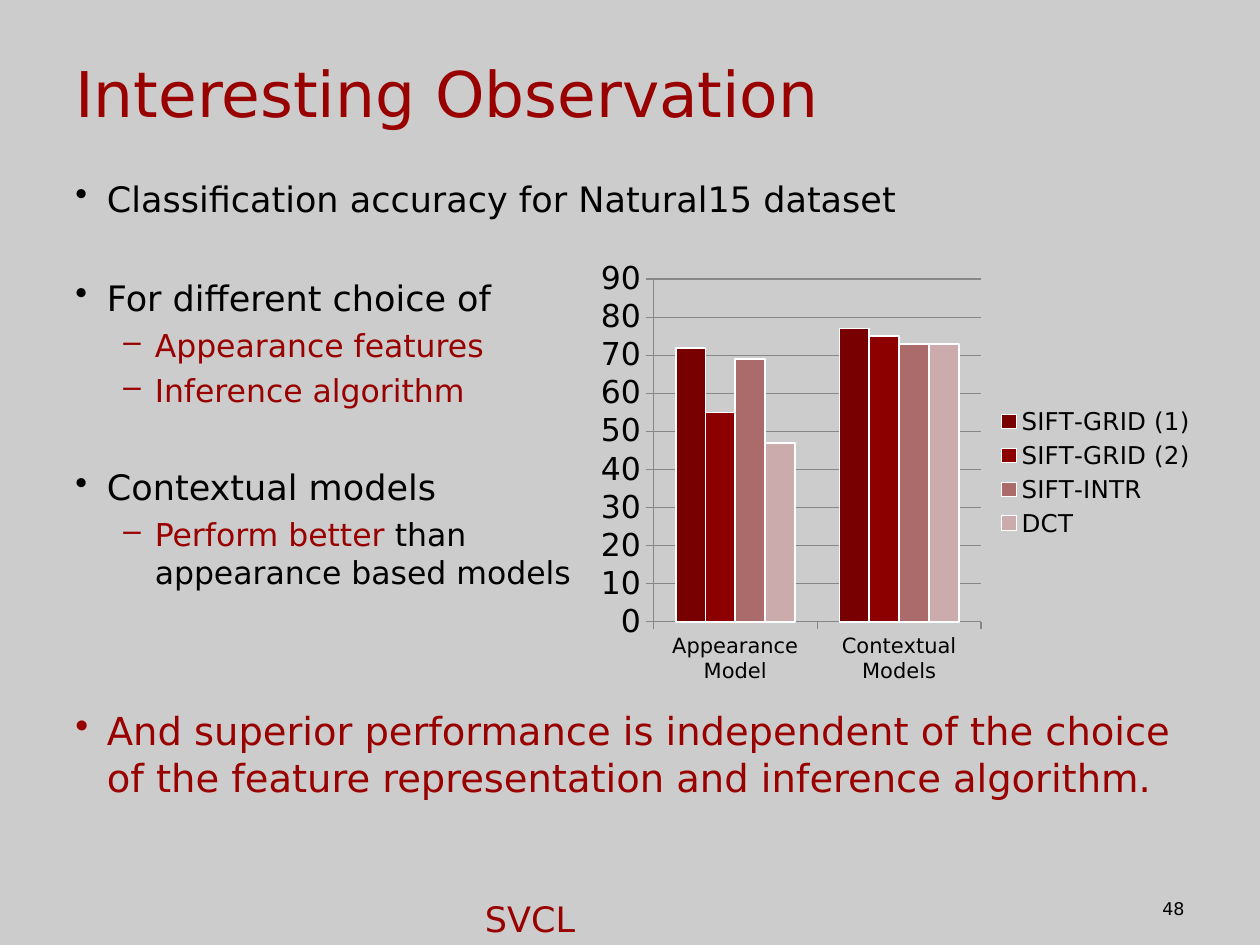
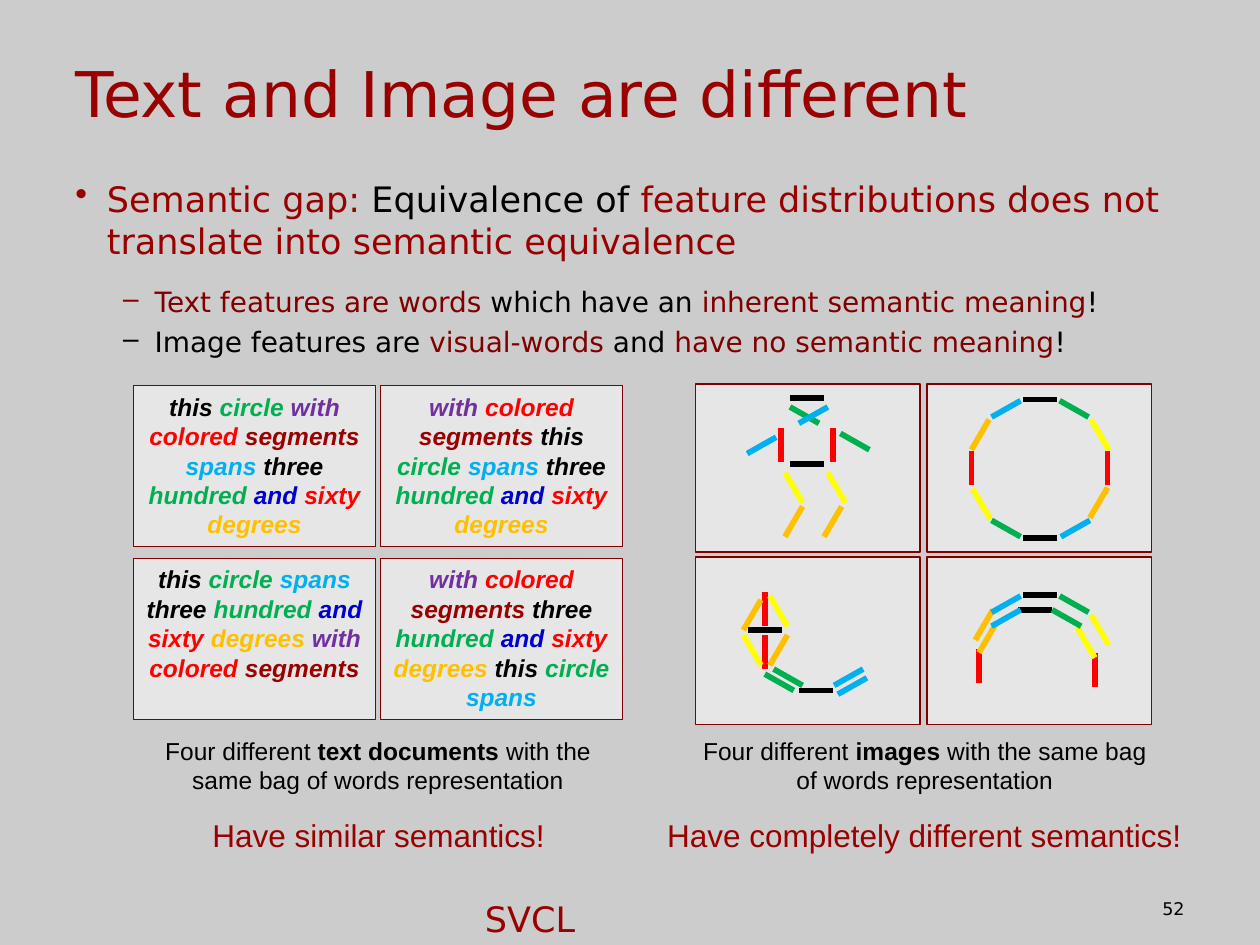
from lxml.etree import SubElement
from pptx import Presentation
from pptx.chart.data import CategoryChartData
from pptx.dml.color import RGBColor
from pptx.enum.chart import XL_CHART_TYPE, XL_LEGEND_POSITION, XL_TICK_MARK
from pptx.enum.shapes import MSO_CONNECTOR, MSO_SHAPE
from pptx.enum.text import MSO_ANCHOR, PP_ALIGN
from pptx.oxml.ns import qn
from pptx.util import Inches, Pt

SANS, ARIAL = "DejaVu Sans", "Arial"
BLACK, WHITE, GREY, PANEL = "000000", "FFFFFF", "CCCCCC", "E6E6E6"
CRIMSON, MAROON, AXIS = "990000", "800000", "878787"
RED, YELLOW, GREEN = "FF0000", "FFFF00", "00B050"
ORANGE, BLUE, NAVY, PURPLE = "FFC000", "00B0F0", "0000CC", "7030A0"

# Bullet levels: character, text indent
LEVELS = [("•", 0.25), ("–", 0.63)]
HANGING = 0.25

WORD_COLORS = {
    "this": BLACK, "circle": GREEN, "with": PURPLE, "colored": RED,
    "segments": CRIMSON, "spans": BLUE, "three": BLACK, "hundred": GREEN,
    "and": NAVY, "sixty": RED, "degrees": ORANGE,
}
DOCUMENTS = [
    "this circle with colored segments spans three hundred and sixty degrees",
    "with colored segments this circle spans three hundred and sixty degrees",
    "this circle spans three hundred and sixty degrees with colored segments",
    "with colored segments three hundred and sixty degrees this circle spans",
]

# Each colour is one visual word with a fixed direction: dx, dy (dy < 0 rises)
STROKES = {
    BLACK: (0.27, 0), RED: (0, 0.27), YELLOW: (0.14, 0.24),
    GREEN: (0.23, 0.13), ORANGE: (0.14, -0.24), BLUE: (0.23, -0.13),
}
# Top left corner of the two strokes of each colour, inside its panel
PERSON = {
    BLACK: [(0.75, 0.63), (0.75, 0.11)], RED: [(1.09, 0.35), (0.68, 0.35)],
    YELLOW: [(1.05, 0.70), (0.71, 0.70)], GREEN: [(1.15, 0.39), (0.75, 0.18)],
    ORANGE: [(0.71, 0.97), (1.02, 0.97)], BLUE: [(0.82, 0.18), (0.41, 0.42)],
}
CIRCLE = {
    BLACK: [(0.76, 0.12), (0.76, 1.22)], RED: [(1.43, 0.53), (0.35, 0.53)],
    YELLOW: [(1.30, 0.28), (0.36, 0.83)], GREEN: [(1.05, 0.13), (0.51, 1.08)],
    ORANGE: [(1.29, 0.82), (0.35, 0.28)], BLUE: [(1.06, 1.08), (0.51, 0.13)],
}
FLOWER = {
    BLACK: [(0.42, 0.58), (0.82, 1.06)], RED: [(0.55, 0.62), (0.55, 0.28)],
    YELLOW: [(0.59, 0.31), (0.38, 0.62)], GREEN: [(0.55, 0.93), (0.62, 0.89)],
    ORANGE: [(0.38, 0.34), (0.59, 0.62)], BLUE: [(1.10, 0.89), (1.13, 0.96)],
}
ARCH = {
    BLACK: [(0.76, 0.30), (0.72, 0.42)], RED: [(1.33, 0.76), (0.41, 0.73)],
    YELLOW: [(1.30, 0.46), (1.19, 0.56)], GREEN: [(1.05, 0.31), (0.99, 0.42)],
    ORANGE: [(0.41, 0.52), (0.38, 0.42)], BLUE: [(0.51, 0.42), (0.51, 0.31)],
}


def rgb(value):
    return RGBColor.from_string(value)


def style_font(font, size, name=SANS, color=None):
    font.size, font.name = Pt(size), name
    if color:
        font.color.rgb = rgb(color)


def add_runs(paragraph, runs):
    """Add (text, colour) runs; a newline in the text is a line break."""
    for text, color in runs:
        for i, line in enumerate(text.split("\n")):
            if i:
                paragraph.add_line_break()
            run = paragraph.add_run()
            run.text = line
            run.font.color.rgb = rgb(color)


def text_frame(slide, box, wrap=True):
    frame = slide.shapes.add_textbox(*map(Inches, box)).text_frame
    frame.word_wrap = wrap
    return frame


def add_label(slide, box, text, size, color, name=SANS, align=PP_ALIGN.LEFT, wrap=True):
    frame = text_frame(slide, box, wrap)
    paragraph = frame.paragraphs[0]
    paragraph.text, paragraph.alignment = text, align
    style_font(paragraph.font, size, name, color)
    return frame


def add_bullets(slide, box, items):
    """Items are (level, size, space before, line spacing, runs)."""
    frame = text_frame(slide, box)
    for i, (level, size, before, spacing, runs) in enumerate(items):
        paragraph = frame.add_paragraph() if i else frame.paragraphs[0]
        char, indent = LEVELS[level]
        paragraph.level = level
        paragraph.line_spacing = spacing
        if i:
            paragraph.space_before = Pt(before)
        props = paragraph._p.get_or_add_pPr()
        props.set("marL", str(Inches(indent)))
        props.set("indent", str(-Inches(HANGING)))
        SubElement(props, qn("a:buChar"), char=char)
        style_font(paragraph.font, size)
        add_runs(paragraph, runs)


def add_base_slide(prs, title, number):
    """Background, title, lab name and page number."""
    slide = prs.slides.add_slide(prs.slide_layouts[6])
    slide.background.fill.solid()
    slide.background.fill.fore_color.rgb = rgb(GREY)
    heading = add_label(slide, (0.5, 0.3, 9, 0.87), title, 36, CRIMSON)
    heading.vertical_anchor = MSO_ANCHOR.MIDDLE
    add_label(slide, (3.75, 7.07, 0.93, 0.43), "SVCL", 20, CRIMSON, wrap=False)
    add_label(slide, (7.17, 7.08, 2.33, 0.27), number, 10, BLACK, align=PP_ALIGN.RIGHT)
    return slide


def add_accuracy_chart(slide, box):
    data = CategoryChartData()
    data.categories = ["Appearance Model", "Contextual Models"]
    accuracies = [
        ("SIFT-GRID (1)", (72, 77), "780000"),
        ("SIFT-GRID (2)", (55, 75), "8C0000"),
        ("SIFT-INTR", (69, 73), "AB6B6B"),
        ("DCT", (47, 73), "CBABAB"),
    ]
    for name, values, _ in accuracies:
        data.add_series(name, values)
    chart = slide.shapes.add_chart(
        XL_CHART_TYPE.COLUMN_CLUSTERED, *map(Inches, box), data).chart
    chart.has_title = False
    style_font(chart.font, 18, SANS, BLACK)

    # Bars
    plot = chart.plots[0]
    plot.gap_width, plot.overlap, plot.vary_by_categories = 150, 0, False
    for bars, (_, _, color) in zip(plot.series, accuracies):
        bars.format.fill.solid()
        bars.format.fill.fore_color.rgb = rgb(color)
        bars.format.line.color.rgb = rgb(WHITE)
        bars.format.line.width = Pt(1)

    # Axes and legend
    accuracy_axis, model_axis = chart.value_axis, chart.category_axis
    accuracy_axis.minimum_scale, accuracy_axis.maximum_scale = 0, 90
    accuracy_axis.major_unit = 10
    accuracy_axis.has_major_gridlines = True
    for axis, size in ((accuracy_axis, 18), (model_axis, 12)):
        axis.major_tick_mark = XL_TICK_MARK.OUTSIDE
        axis.minor_tick_mark = XL_TICK_MARK.NONE
        style_font(axis.tick_labels.font, size, SANS, BLACK)
    for line in (accuracy_axis.format.line, model_axis.format.line,
                 accuracy_axis.major_gridlines.format.line):
        line.color.rgb = rgb(AXIS)
        line.width = Pt(0.75)
    chart.has_legend = True
    chart.legend.position = XL_LEGEND_POSITION.RIGHT
    chart.legend.include_in_layout = False
    style_font(chart.legend.font, 14, SANS, BLACK)


def add_panel(slide, box, line_width):
    panel = slide.shapes.add_shape(MSO_SHAPE.RECTANGLE, *map(Inches, box))
    panel.shadow.inherit = False
    panel.fill.solid()
    panel.fill.fore_color.rgb = rgb(PANEL)
    panel.line.color.rgb = rgb(MAROON)
    panel.line.width = Pt(line_width)
    return panel


def add_document(slide, box, words):
    frame = add_panel(slide, box, 0.75).text_frame
    frame.word_wrap = True
    frame.vertical_anchor = MSO_ANCHOR.TOP
    paragraph = frame.paragraphs[0]
    paragraph.alignment = PP_ALIGN.CENTER
    style_font(paragraph.font, 14, ARIAL)
    paragraph.font.bold = paragraph.font.italic = True
    words = words.split()
    for i, word in enumerate(words):
        gap = " " if i < len(words) - 1 else ""
        add_runs(paragraph, [(word + gap, WORD_COLORS[word])])


def add_drawing(slide, box, strokes):
    add_panel(slide, box, 1)
    left, top = box[:2]
    for color, corners in strokes.items():
        dx, dy = STROKES[color]
        for x, y in corners:
            start = top + y + max(-dy, 0)
            ends = (left + x, start, left + x + dx, start + dy)
            stroke = slide.shapes.add_connector(
                MSO_CONNECTOR.STRAIGHT, *map(Inches, ends))
            stroke.line.color.rgb = rgb(color)
            stroke.line.width = Pt(3.25)
            SubElement(stroke._element.spPr, qn("a:effectLst"))


def add_grid(slide, box, pitch, add_cell, contents):
    """Two by two cells; box is the first one, pitch the step across and down."""
    left, top, width, height = box
    for i, content in enumerate(contents):
        row, column = divmod(i, 2)
        cell = (left + column * pitch[0], top + row * pitch[1], width, height)
        add_cell(slide, cell, content)


def add_caption(slide, box, subject):
    paragraph = text_frame(slide, box).paragraphs[0]
    paragraph.alignment = PP_ALIGN.CENTER
    style_font(paragraph.font, 14, ARIAL, BLACK)
    for text in ("Four different ", subject, " with the same bag of words representation"):
        run = paragraph.add_run()
        run.text = text
        run.font.bold = text == subject


def build_observation(prs):
    slide = add_base_slide(prs, "Interesting Observation", "48")
    add_bullets(slide, (0.5, 1.36, 9.25, 5.55), [
        (0, 20, 0, 1, [("Classification accuracy for Natural15 dataset", BLACK)]),
        (0, 20, 32.6, 1, [("For different choice of", BLACK)]),
        (1, 18, 4.2, 1, [("Appearance features", CRIMSON)]),
        (1, 18, 4.2, 1, [("Inference algorithm", CRIMSON)]),
        (0, 20, 32.6, 1, [("Contextual models", BLACK)]),
        (1, 18, 4.2, 1, [("Perform better ", CRIMSON),
                         ("than \nappearance based models", BLACK)]),
        (0, 22, 66.6, 1, [("And superior performance is independent of the choice of the "
                           "feature representation and inference algorithm.", CRIMSON)]),
    ])
    add_accuracy_chart(slide, (4.67, 2, 4.92, 3.5))


def build_difference(prs):
    slide = add_base_slide(prs, "Text and Image are different", "52")
    add_bullets(slide, (0.5, 1.36, 9, 1.6), [
        (0, 20, 0, 1, [("Semantic gap: ", CRIMSON), ("Equivalence of", BLACK),
                       (" feature distributions does not translate into "
                        "semantic equivalence", CRIMSON)]),
        (1, 16, 3.7, 1.5, [("Text features are words ", MAROON), ("which have an ", BLACK),
                           ("inherent semantic meaning", MAROON), ("!", BLACK)]),
        (1, 16, 3.7, 1, [("Image features are ", BLACK), ("visual-words", MAROON),
                         (" and ", BLACK), ("have no semantic meaning", MAROON),
                         ("!", BLACK)]),
    ])

    # Text documents on the left, drawings on the right
    add_grid(slide, (1.06, 3.06, 1.92, 1.28), (1.96, 1.37), add_document, DOCUMENTS)
    add_grid(slide, (5.52, 3.05, 1.78, 1.33), (1.84, 1.37), add_drawing,
             [PERSON, CIRCLE, FLOWER, ARCH])

    # Captions and conclusions
    for caption_left, subject, conclusion_left, conclusion in (
            (1.08, "text documents", 0.67, "Have similar semantics!"),
            (5.42, "images", 5, "Have completely different semantics!")):
        add_caption(slide, (caption_left, 5.79, 3.84, 0.57), subject)
        add_label(slide, (conclusion_left, 6.43, 4.67, 0.4), conclusion, 18, CRIMSON,
                  ARIAL, PP_ALIGN.CENTER)


def main():
    prs = Presentation()
    prs.slide_width, prs.slide_height = Inches(10), Inches(7.5)
    build_observation(prs)
    build_difference(prs)
    prs.save("out.pptx")


if __name__ == "__main__":
    main()
